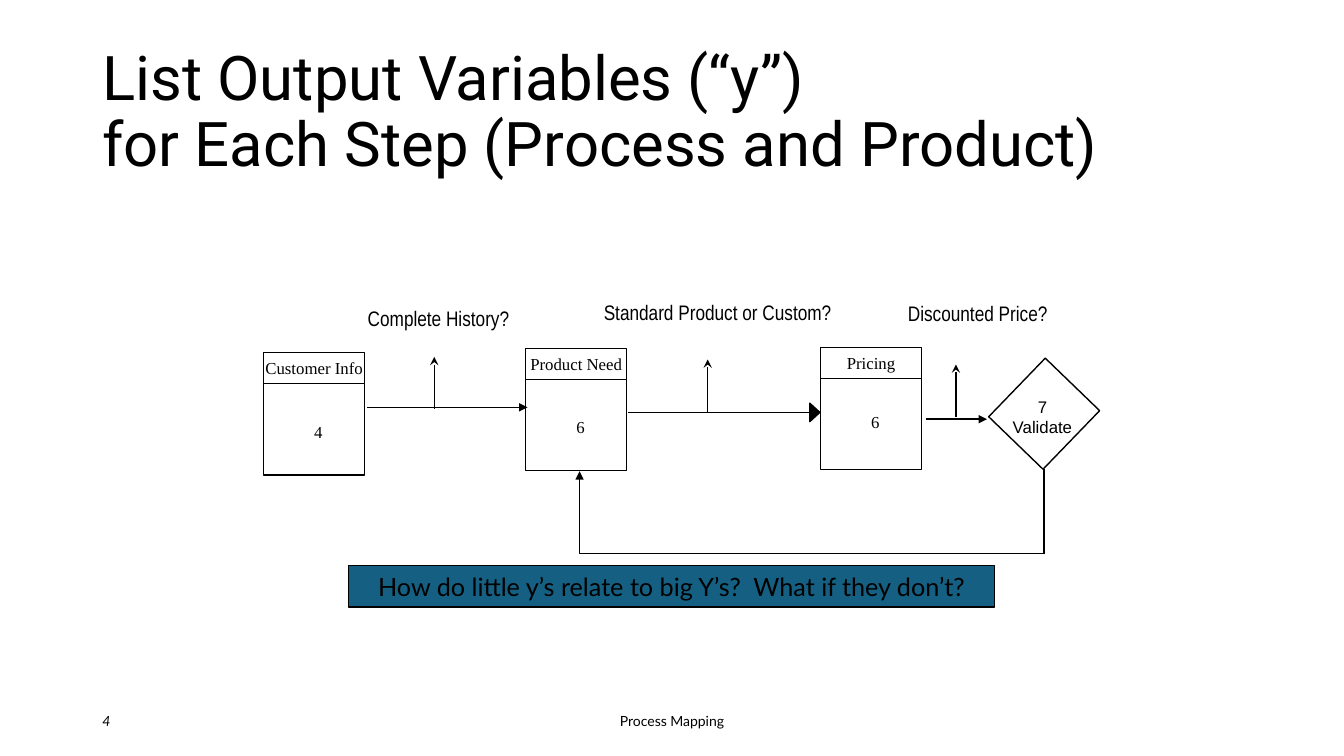
from dataclasses import dataclass
from lxml.etree import SubElement
from pptx import Presentation
from pptx.dml.color import RGBColor
from pptx.enum.shapes import MSO_CONNECTOR, MSO_SHAPE
from pptx.enum.text import MSO_ANCHOR, PP_ALIGN
from pptx.oxml.ns import qn
from pptx.util import Inches, Pt


@dataclass(frozen=True)
class Theme:
    ink: str = "000000"
    paper: str = "FFFFFF"
    teal: str = "156082"
    title: tuple = ("Roboto", 44)
    banner: tuple = ("Lato", 18)
    foot: tuple = ("Lato", 10)
    label: tuple = ("Arial Narrow", 15)
    step: tuple = ("Times New Roman", 12)
    check: tuple = ("Arial", 12)
    thin: float = 0.75
    line: float = 1


class Sketch:
    """Draws on one slide, with lengths in a grid of 160 columns by 90 rows."""

    def __init__(self, deck, theme):
        self.theme = theme
        self.slide = deck.slides.add_slide(deck.slide_layouts[6])
        self.shapes = self.slide.shapes
        self.col = deck.slide_width / 160
        self.row = deck.slide_height / 90

    def spot(self, x, y):
        return round(x * self.col), round(y * self.row)

    def letter(self, shape, lines, font, center=True, wrap=True, space=1.0,
               italic=False, pad=0.1, breaks=False):
        frame = shape.text_frame
        frame.word_wrap = wrap
        frame.vertical_anchor = MSO_ANCHOR.MIDDLE
        frame.margin_left = frame.margin_right = Inches(pad)
        frame.margin_top = frame.margin_bottom = Inches(pad / 2)
        para = frame.paragraphs[0]
        for i, line in enumerate(lines):
            if i and breaks:
                para.add_line_break()
            elif i:
                para = frame.add_paragraph()
            para.alignment = PP_ALIGN.CENTER if center else PP_ALIGN.LEFT
            para.line_spacing = space
            run = para.add_run()
            run.text = line
            run.font.name = font[0]
            run.font.size = Pt(font[1])
            run.font.italic = italic
            run.font.color.rgb = RGBColor.from_string(self.theme.ink)

    def text(self, x, y, w, h, lines, font, **style):
        box = self.shapes.add_textbox(*self.spot(x, y), *self.spot(w, h))
        self.letter(box, lines, font, **style)

    def paint(self, shape, fill, width):
        shape.shadow.inherit = False
        if fill:
            shape.fill.solid()
            shape.fill.fore_color.rgb = RGBColor.from_string(fill)
        else:
            shape.fill.background()
        shape.line.color.rgb = RGBColor.from_string(self.theme.ink)
        shape.line.width = Pt(width)

    def rect(self, x, y, w, h, fill=None, width=1, turn=0):
        shape = self.shapes.add_shape(
            MSO_SHAPE.RECTANGLE, *self.spot(x, y), *self.spot(w, h))
        shape.rotation = turn
        self.paint(shape, fill, width)
        return shape

    def line(self, start, end, head=None, tail=None, kind=MSO_CONNECTOR.STRAIGHT):
        link = self.shapes.add_connector(kind, *self.spot(*start), *self.spot(*end))
        link.line.color.rgb = RGBColor.from_string(self.theme.ink)
        link.line.width = Pt(self.theme.line)
        props = link._element.spPr.find(qn("a:ln"))
        for tag, tip in (("a:headEnd", head), ("a:tailEnd", tail)):
            if tip:
                SubElement(props, qn(tag), type=tip)
        SubElement(link._element.spPr, qn("a:effectLst"))
        return link

    def elbow(self, start, end, bend, **tips):
        link = self.line(start, end, kind=MSO_CONNECTOR.ELBOW, **tips)
        shape = link._element.spPr.find(qn("a:prstGeom"))
        guides = shape.find(qn("a:avLst"))
        if guides is None:
            guides = SubElement(shape, qn("a:avLst"))
        SubElement(guides, qn("a:gd"), name="adj1", fmla=f"val {bend}")

    def wedge(self, x, y, w, h):
        first, *rest = [self.spot(*p) for p in
                        ((x + w, y + h / 2), (x, y + h), (x, y))]
        form = self.shapes.build_freeform(*first)
        form.add_line_segments(rest, close=True)
        self.paint(form.convert_to_shape(), self.theme.ink, self.theme.line)

    def step(self, x, y, name, count, drop):
        theme = self.theme
        head = self.rect(x, y, 12, 3.65, theme.paper, theme.thin)
        self.letter(head, [name], theme.step, wrap=False, pad=0)
        self.rect(x, y + 3.65, 12, 10.9, width=theme.thin)
        self.text(x + 4.8, y + drop, 3.4, 3.6, [count], theme.step, wrap=False)


def main():
    deck = Presentation()
    deck.slide_width, deck.slide_height = Inches(13.33), Inches(7.5)
    theme = Theme()
    art = Sketch(deck, theme)

    art.text(11, 83.4, 36, 4.8, ["4"], theme.foot, center=False, italic=True)
    art.text(53, 83.4, 54, 4.8, ["Process Mapping"], theme.foot)
    art.text(11, 4.8, 138, 17.4,
             ["List Output Variables (“y”) ", "for Each Step (Process and Product)"],
             theme.title, center=False, space=0.9, breaks=True)
    note = art.rect(41.5, 67.3, 76.9, 4.95, theme.teal)
    art.letter(note, ["How do little y’s relate to big Y’s?  What if they don’t?"],
               theme.banner)

    for x, y, w, ask in ((70.7, 35, 29.6, "Standard Product or Custom?"),
                         (42.6, 35.8, 19.3, "Complete History?"),
                         (106.9, 35.2, 19.3, "Discounted Price?")):
        art.text(x, y, w, 4.2, [ask], theme.label, center=False, wrap=False)

    for x, y in ((51.7, 48.7), (84.25, 49), (113.8, 49.6)):
        art.line((x, y), (x, y - 6.2), tail="stealth")

    for left, right, y, tip in ((74.8, 96.4, 49.1, None),
                                (43.7, 62.8, 48.5, "triangle"),
                                (110.2, 117.5, 49.9, "triangle")):
        art.line((left, y), (right, y), tail=tip)
    art.wedge(96.4, 48, 1.2, 2.2)

    for x, y, name, count, drop in ((31.4, 42, "Customer Info", "4", 7.6),
                                    (62.6, 41.5, "Product Need", "6", 7.5),
                                    (97.7, 41.4, "Pricing", "6", 7)):
        art.step(x, y, name, count, drop)

    art.rect(119.8, 44.4, 9, 9.7, theme.paper, turn=44)
    art.text(119.3, 46.6, 9.6, 6, ["7", "Validate"], theme.check, wrap=False)

    art.elbow((69, 56.1), (124.3, 65.9), 0, head="triangle")
    art.line((124.3, 55.8), (124.3, 66))
    deck.save("out.pptx")


if __name__ == "__main__":
    main()
